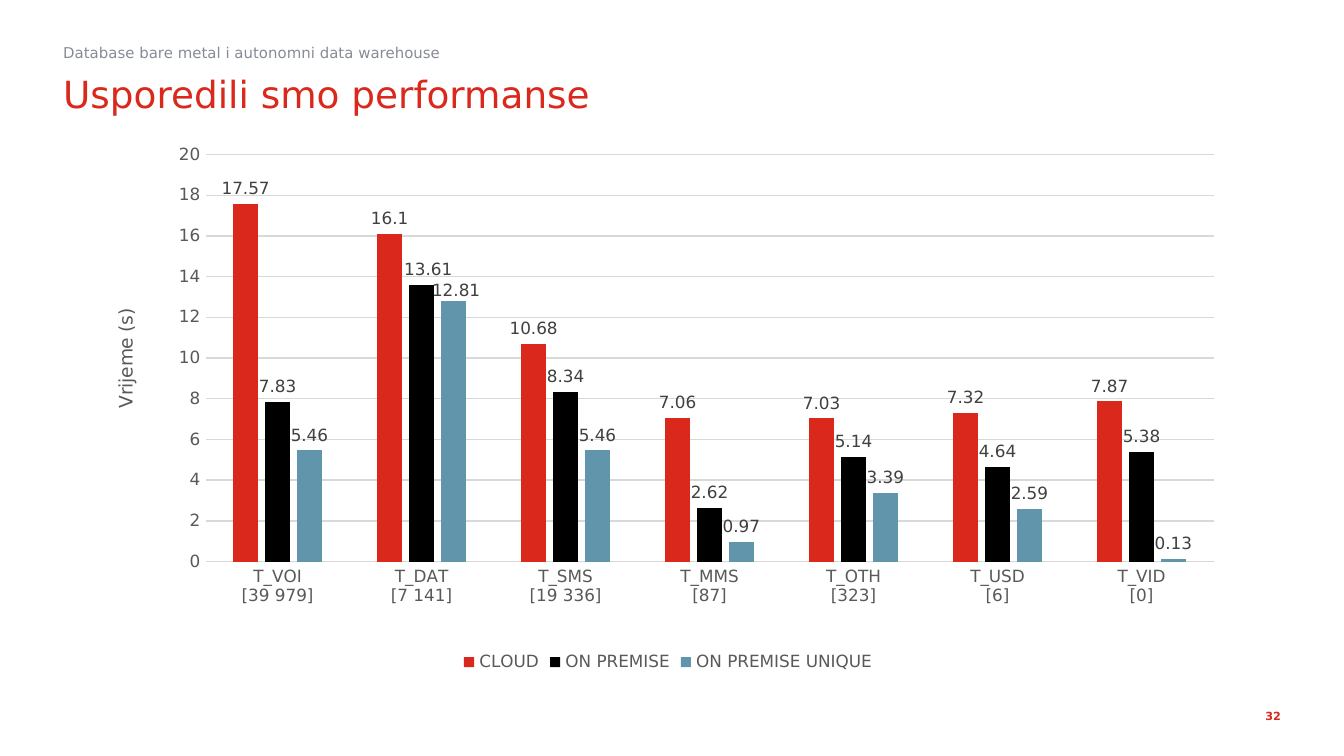
from lxml.etree import SubElement
from pptx import Presentation
from pptx.chart.data import CategoryChartData
from pptx.dml.color import RGBColor
from pptx.enum.chart import XL_CHART_TYPE as ChartType, XL_LABEL_POSITION as LabelPosition
from pptx.enum.chart import XL_LEGEND_POSITION as LegendPosition, XL_TICK_MARK as TickMark
from pptx.enum.text import MSO_ANCHOR as Anchor, PP_ALIGN as Align
from pptx.oxml import parse_xml
from pptx.oxml.ns import nsdecls, qn
from pptx.util import Inches, Pt

RED = RGBColor(0xDA, 0x28, 0x1C)
BLACK = RGBColor(0, 0, 0)
BLUE = RGBColor(0x61, 0x95, 0xAC)
SLATE = RGBColor(0x86, 0x8C, 0x96)
GREY = RGBColor(0x59, 0x59, 0x59)
DARK = RGBColor(0x40, 0x40, 0x40)
GRID = RGBColor(0xD9, 0xD9, 0xD9)
FONT = "DejaVu Sans"

TABLES = {
    "T_VOI": "39 979", "T_DAT": "7 141", "T_SMS": "19 336", "T_MMS": "87",
    "T_OTH": "323", "T_USD": "6", "T_VID": "0",
}
TIMINGS = [
    ("CLOUD", RED, (17.57, 16.1, 10.68, 7.06, 7.03, 7.32, 7.87)),
    ("ON PREMISE", BLACK, (7.83, 13.61, 8.34, 2.62, 5.14, 4.64, 5.38)),
    ("ON PREMISE UNIQUE", BLUE, (5.46, 12.81, 5.46, 0.97, 3.39, 2.59, 0.13)),
]
CROWDED_TABLE = 1
LABEL_SHIFTS = {1: (0.05, 0), 2: (0.02, 0.04)}


def apply(target, **values):
    for key, value in values.items():
        setattr(target, key, value)


def style_font(font, size, color, bold=False):
    apply(font, name=FONT, size=Pt(size), bold=bold)
    font.color.rgb = color


def add_text(slide, box, text, size, color, insets=(0, 0, 0, 0), bold=False,
             anchor=Anchor.TOP, align=Align.LEFT, spacing=1.0):
    frame = slide.shapes.add_textbox(*map(Inches, box)).text_frame
    left, top, right, bottom = map(Inches, insets)
    apply(frame, word_wrap=True, vertical_anchor=anchor, margin_left=left,
          margin_top=top, margin_right=right, margin_bottom=bottom)
    paragraph = frame.paragraphs[0]
    apply(paragraph, alignment=align, line_spacing=spacing)
    run = paragraph.add_run()
    run.text = text
    style_font(run.font, size, color, bold)


def add_header(slide, box):
    left, top, width, height = box
    kicker = 0.17
    add_text(slide, (left, top, width, kicker),
             "Database bare metal i autonomni data warehouse", 8, SLATE, spacing=1.1)
    add_text(slide, (left, top + kicker, width, height - kicker),
             "Usporedili smo performanse", 20, RED, insets=(0, 0.05, 0, 0.05))


def add_page_number(slide, box):
    add_text(slide, box, "32", 6, RED, insets=(0.1, 0.05, 0.1, 0.06), bold=True,
             anchor=Anchor.MIDDLE, align=Align.RIGHT)


def set_layout(parent, position, box, lengths, target=None, mode="edge"):
    for old in parent.findall(qn("c:layout")):
        parent.remove(old)
    layout = parse_xml(f"<c:layout {nsdecls('c')}><c:manualLayout/></c:layout>")
    settings = {"layoutTarget": target} if target else {}
    settings.update({"xMode": mode, "yMode": mode})
    settings.update(zip("xywh", (a / b for a, b in zip(lengths, box[2:] * 2))))
    for tag, value in settings.items():
        SubElement(layout[0], qn(f"c:{tag}")).set("val", str(value))
    parent.insert(position, layout)


def style_line(line):
    line.color.rgb = GRID
    line.width = Pt(0.75)


def style_axes(chart, box):
    for axis in (chart.category_axis, chart.value_axis):
        apply(axis, major_tick_mark=TickMark.NONE, minor_tick_mark=TickMark.NONE)
        style_font(axis.tick_labels.font, 9, GREY)
    style_line(chart.category_axis.format.line)
    seconds = chart.value_axis
    apply(seconds, minimum_scale=0, maximum_scale=20, major_unit=2,
          has_major_gridlines=True)
    seconds.format.line.fill.background()
    style_line(seconds.major_gridlines.format.line)
    title = seconds.axis_title
    title.text_frame.text = "Vrijeme (s)"
    style_font(title.text_frame.paragraphs[0].runs[0].font, 10, GREY)
    set_layout(title._element, 1, box, (0.09, 1.27))


def shift_label(series, box, shift):
    label = series.points[CROWDED_TABLE].data_label
    style_font(label.font, 9, DARK)
    label.position = LabelPosition.OUTSIDE_END
    entry = series.data_labels._element.find(qn("c:dLbl"))
    set_layout(entry, 1, box, shift, mode="factor")


def style_series(series, color):
    apply(series, invert_if_negative=False)
    series.format.fill.solid()
    series.format.fill.fore_color.rgb = color
    labels = series.data_labels
    apply(labels, show_value=True, position=LabelPosition.OUTSIDE_END)
    style_font(labels.font, 9, DARK)


def add_timing_chart(slide, box):
    data = CategoryChartData()
    data.categories = [f"{table}\n[{rows}]" for table, rows in TABLES.items()]
    for name, _, seconds in TIMINGS:
        data.add_series(name, seconds)
    chart = slide.shapes.add_chart(
        ChartType.COLUMN_CLUSTERED, *map(Inches, box), data).chart
    style_font(chart.font, 10, BLACK)
    apply(chart, has_title=False, has_legend=True)
    apply(chart.legend, position=LegendPosition.BOTTOM, include_in_layout=False)
    style_font(chart.legend.font, 9, GREY)
    style_axes(chart, box)

    plot = chart.plots[0]
    apply(plot, gap_width=219, overlap=-27, vary_by_categories=False)
    for series, (_, color, _) in zip(plot.series, TIMINGS):
        style_series(series, color)
    for index, shift in LABEL_SHIFTS.items():
        shift_label(plot.series[index], box, shift)
    set_layout(chart._chartSpace.chart.plotArea, 0, box,
               (0.8, 0.15, 7.5, 3.03), target="inner")


def main():
    deck = Presentation()
    apply(deck, slide_width=Inches(10), slide_height=Inches(10) * 9 // 16)
    slide = deck.slides.add_slide(deck.slide_layouts[6])
    add_page_number(slide, (7.77, 5.17, 1.86, 0.32))
    add_header(slide, (0.47, 0.31, 9.06, 0.99))
    add_timing_chart(slide, (0.73, 1, 8.48, 4.04))
    deck.save("out.pptx")


if __name__ == "__main__":
    main()
